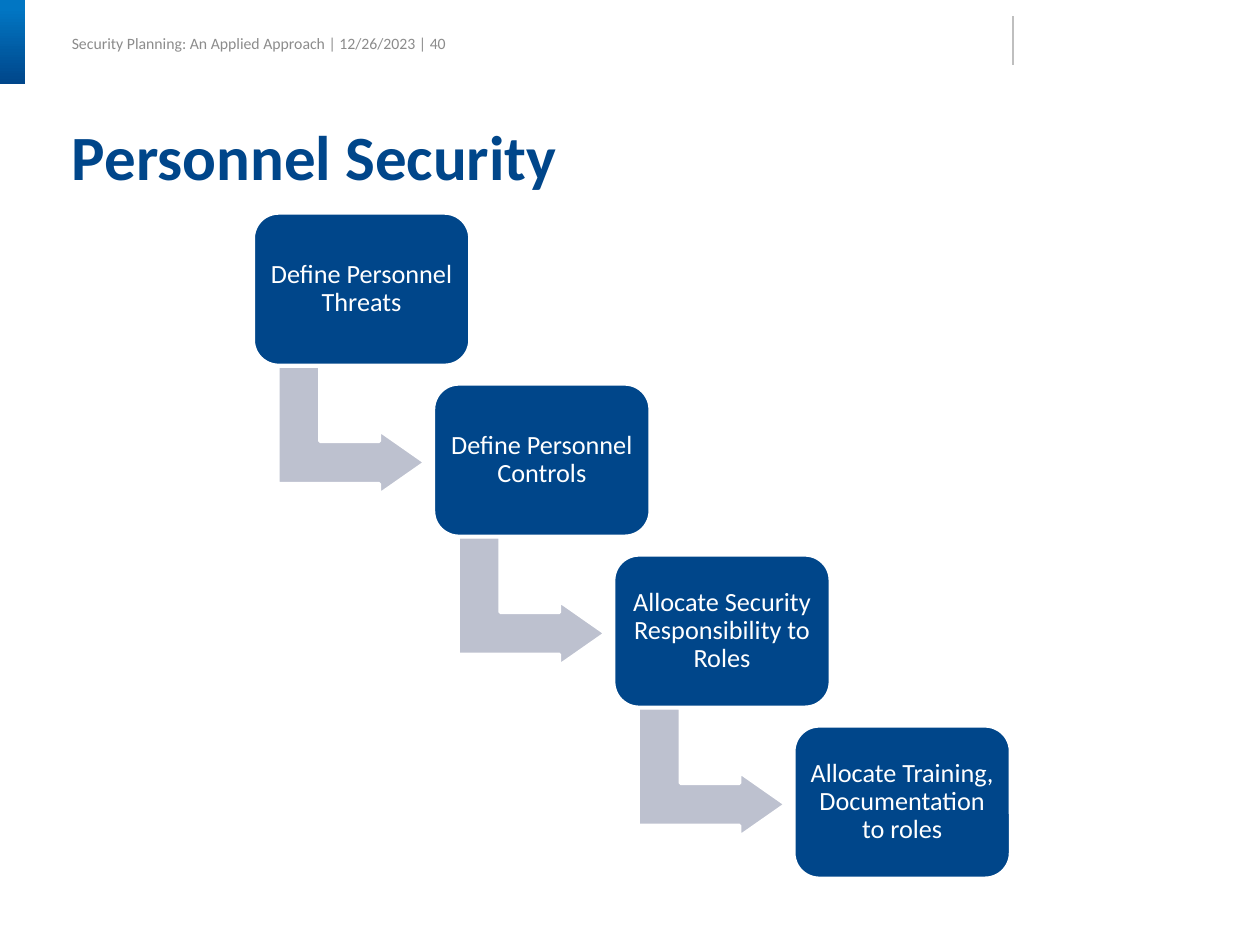
"""Build the Personnel Security slide: a staircase of four process steps."""
from pptx import Presentation, util as u
from pptx.dml.color import RGBColor
from pptx.enum import shapes, text
from pptx.oxml.ns import qn

HEADER = "Security Planning: An Applied Approach | 12/26/2023 | 40"
TITLE = "Personnel Security"
STEPS = [
    "Define Personnel Threats",
    "Define Personnel Controls",
    "Allocate Security Responsibility to Roles",
    "Allocate Training, Documentation to roles",
]
THEME = {
    "font": "Calibri", "header_size": 9, "title_size": 36, "step_size": 15,
    "navy": "00468A", "blue": "0176C3", "white": "FFFFFF",
    "arrow": "BDC1CF", "muted": "8C8C8C", "rule": "BFBFBF",
}
SLIDE_W, SLIDE_H = 10, 7.5
MARGIN = 0.57
STEP_LEFT, STEP_TOP, STEP_W, STEP_H = 2.01, 1.69, 1.72, 1.21
STRIDE_X, STRIDE_Y = 1.43, 1.357
ARROW_DX, ARROW_DY, ARROW_W, ARROW_H = 0.27, 1.14, 1.02, 1.17
ARROW_BENDS = (0.328, 0.25, 0.358)


def color(key):
    return RGBColor.from_string(THEME[key])


def box(*inches):
    return [u.Inches(value) for value in inches]


def write(frame, words, size, ink, anchor, inset=0, wrap=True, bold=False,
          align=text.PP_ALIGN.LEFT, spacing=1.0):
    frame.word_wrap = wrap
    frame.vertical_anchor = anchor
    frame.margin_left = frame.margin_right = u.Inches(inset)
    frame.margin_top = frame.margin_bottom = u.Inches(inset)
    paragraph = frame.paragraphs[0]
    paragraph.text = words
    paragraph.alignment = align
    paragraph.line_spacing = spacing
    font = paragraph.font
    font.name, font.size, font.bold = THEME["font"], u.Pt(THEME[size]), bold
    font.color.rgb = color(ink)


def add_block(slide, kind, place, fill):
    block = slide.shapes.add_shape(kind, *box(*place))
    block.shadow.inherit = False
    block.fill.solid()
    block.fill.fore_color.rgb = color(fill)
    block.line.color.rgb = color("white")
    block.line.width = u.Pt(2)
    return block


def add_header(slide):
    header = slide.shapes.add_textbox(*box(MARGIN, 0.23, 2.97, 0.23))
    write(header.text_frame, HEADER, "header_size", "muted",
          text.MSO_ANCHOR.MIDDLE, wrap=False)

    tab = slide.shapes.add_shape(shapes.MSO_SHAPE.RECTANGLE, *box(0, 0, 0.2, 0.67))
    tab.shadow.inherit = False
    tab.line.fill.background()
    tab.fill.gradient()
    tab.fill.gradient_angle = 270
    for stop, (position, key) in zip(tab.fill.gradient_stops,
                                     [(0.1, "blue"), (1, "navy")]):
        stop.position = position
        stop.color.rgb = color(key)

    rule = slide.shapes.add_connector(shapes.MSO_CONNECTOR.STRAIGHT,
                                      *box(8.04, 0.13, 8.04, 0.52))
    rule.line.color.rgb = color("rule")
    rule.line.width = u.Pt(0.75)
    properties = rule._element.spPr
    properties.append(properties.makeelement(qn("a:effectLst"), {}))


def add_steps(slide):
    for index, words in enumerate(STEPS):
        left = STEP_LEFT + index * STRIDE_X
        top = STEP_TOP + index * STRIDE_Y
        if index < len(STEPS) - 1:
            arrow = add_block(slide, shapes.MSO_SHAPE.BENT_UP_ARROW,
                              (left + ARROW_DX, top + ARROW_DY, ARROW_W, ARROW_H),
                              "arrow")
            arrow.rotation = 90
            for bend, share in enumerate(ARROW_BENDS):
                arrow.adjustments[bend] = share
        step = add_block(slide, shapes.MSO_SHAPE.ROUNDED_RECTANGLE,
                         (left, top, STEP_W, STEP_H), "navy")
        write(step.text_frame, words, "step_size", "white",
              text.MSO_ANCHOR.MIDDLE, inset=0.06,
              align=text.PP_ALIGN.CENTER, spacing=0.9)


def main():
    deck = Presentation()
    deck.slide_width, deck.slide_height = box(SLIDE_W, SLIDE_H)
    slide = deck.slides.add_slide(deck.slide_layouts[6])
    add_header(slide)
    add_steps(slide)
    title = slide.shapes.add_textbox(*box(MARGIN, 1, 8.92, 0.55))
    write(title.text_frame, TITLE, "title_size", "navy",
          text.MSO_ANCHOR.TOP, bold=True, spacing=0.9)
    deck.save("out.pptx")


if __name__ == "__main__":
    main()
